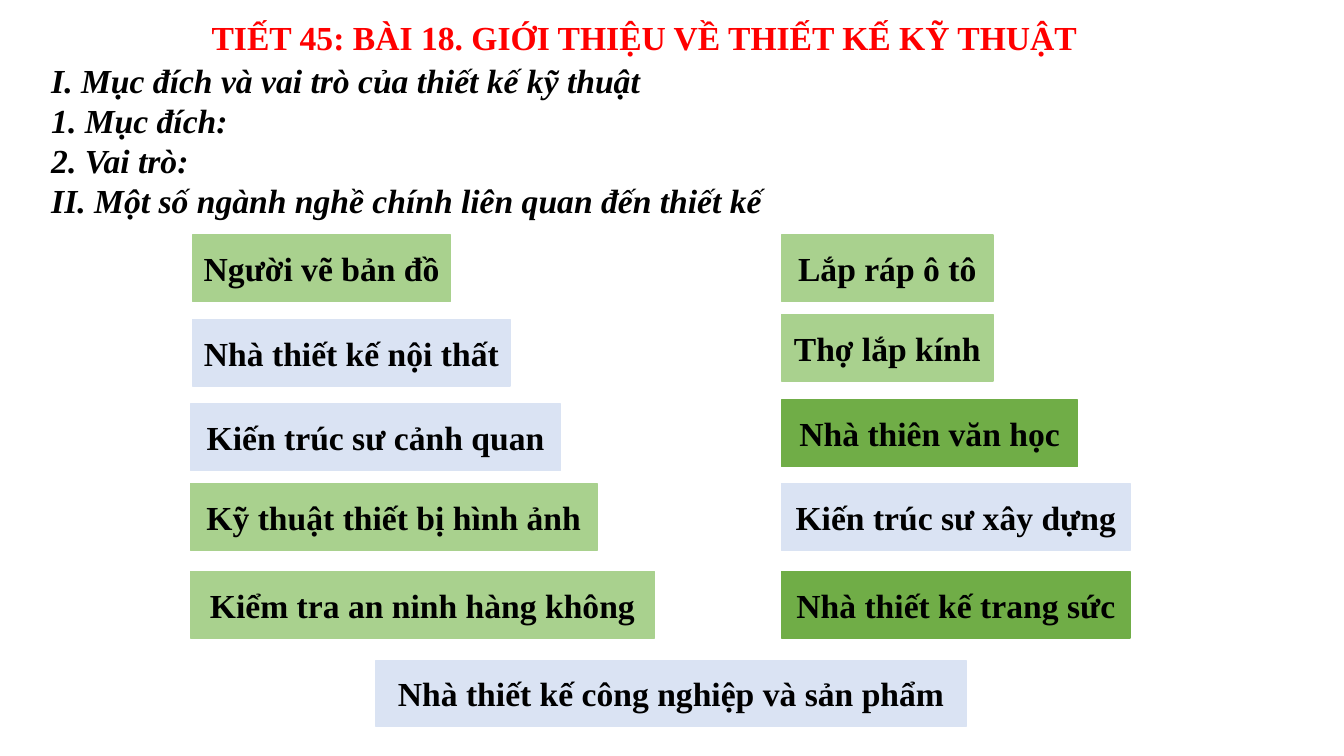
from dataclasses import dataclass

from pptx import Presentation
from pptx.dml.color import RGBColor
from pptx.enum.shapes import MSO_SHAPE as Shape
from pptx.enum.text import MSO_ANCHOR as Anchor, MSO_AUTO_SIZE as Fit, PP_ALIGN as Align
from pptx.slide import Slide
from pptx.text.text import TextFrame
from pptx.util import Inches, Pt

BLUE, LIGHT, GREEN = "DAE3F3", "A9D18E", "70AD47"
BLACK, RED = "000000", "FF0000"
RIGHT = 7.75
HIGH = 0.66


@dataclass
class Job:
    name: str
    left: float
    top: float
    width: float
    fill: str


@dataclass
class Note:
    lines: list[str]
    left: float
    top: float
    width: float
    height: float
    color: str
    italic: bool = False


NOTES = [
    Note(["TIẾT 45: BÀI 18. GIỚI THIỆU VỀ THIẾT KẾ KỸ THUẬT"], 2, 0.12, 9.34, 0.5, RED),
    Note(
        [
            "I. Mục đích và vai trò của thiết kế kỹ thuật",
            "1. Mục đích:",
            "2. Vai trò:",
            "II. Một số ngành nghề chính liên quan đến thiết kế",
        ],
        0.41, 0.54, 12.92, 2.12, BLACK, italic=True,
    ),
]

JOBS = [
    Job("Người vẽ bản đồ", 1.91, 2.33, 2.56, LIGHT),
    Job("Nhà thiết kế nội thất", 1.91, 3.17, 3.15, BLUE),
    Job("Kiến trúc sư cảnh quan", 1.89, 4.01, 3.67, BLUE),
    Job("Kỹ thuật thiết bị hình ảnh", 1.89, 4.8, 4.03, LIGHT),
    Job("Kiểm tra an ninh hàng không", 1.89, 5.67, 4.6, LIGHT),
    Job("Lắp ráp ô tô", RIGHT, 2.33, 2.1, LIGHT),
    Job("Thợ lắp kính", RIGHT, 3.12, 2.1, LIGHT),
    Job("Nhà thiên văn học", RIGHT, 3.97, 2.94, GREEN),
    Job("Kiến trúc sư xây dựng", RIGHT, 4.8, 3.46, BLUE),
    Job("Nhà thiết kế trang sức", RIGHT, 5.67, 3.46, GREEN),
    Job("Nhà thiết kế công nghiệp và sản phẩm", 3.73, 6.55, 5.85, BLUE),
]


def rgb(code: str) -> RGBColor:
    return RGBColor.from_string(code)


def write(frame: TextFrame, lines: list[str], color: str, align: Align, italic: bool = False) -> None:
    frame.word_wrap = True
    frame.text = "\n".join(lines)
    for par in frame.paragraphs:
        par.alignment = align
        font = par.font
        font.name = "Times New Roman"
        font.size = Pt(24)
        font.bold = True
        font.italic = italic
        font.color.rgb = rgb(color)


def add_note(slide: Slide, note: Note) -> None:
    box = slide.shapes.add_textbox(
        Inches(note.left), Inches(note.top), Inches(note.width), Inches(note.height)
    )
    write(box.text_frame, note.lines, note.color, Align.LEFT, note.italic)
    box.text_frame.auto_size = Fit.SHAPE_TO_FIT_TEXT


def add_job(slide: Slide, job: Job) -> None:
    box = slide.shapes.add_shape(
        Shape.RECTANGLE, Inches(job.left), Inches(job.top), Inches(job.width), Inches(HIGH)
    )
    box.shadow.inherit = False
    box.fill.solid()
    box.fill.fore_color.rgb = rgb(job.fill)
    box.line.color.rgb = rgb(job.fill)
    box.line.width = Pt(1)
    box.text_frame.vertical_anchor = Anchor.MIDDLE
    write(box.text_frame, [job.name], BLACK, Align.CENTER)


def main() -> None:
    deck = Presentation()
    deck.slide_width = Inches(13.33)
    deck.slide_height = Inches(7.5)
    slide = deck.slides.add_slide(deck.slide_layouts[6])
    for note in NOTES:
        add_note(slide, note)
    for job in JOBS:
        add_job(slide, job)
    deck.save("out.pptx")


if __name__ == "__main__":
    main()
